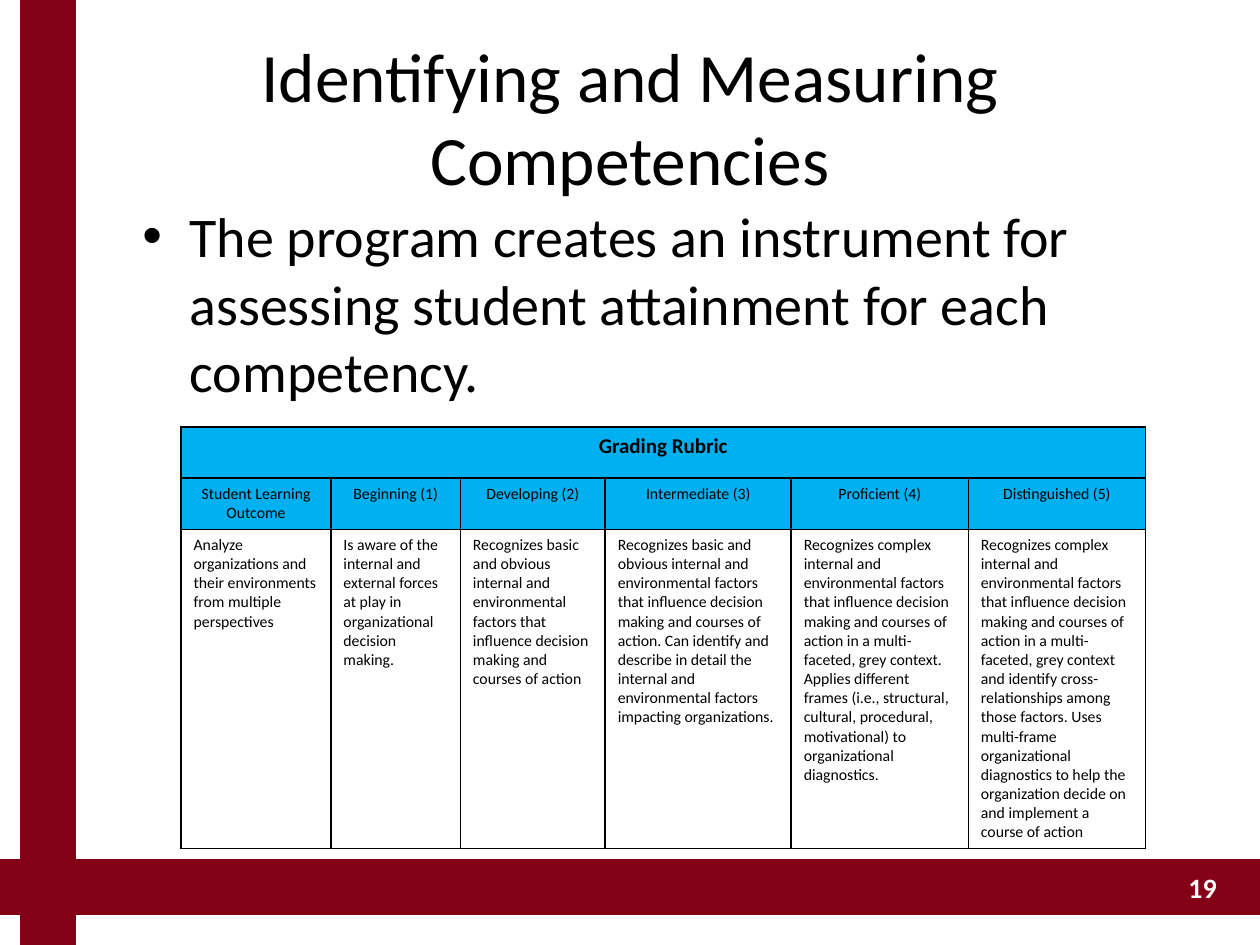
from lxml import etree
from pptx import Presentation
from pptx import util as u
from pptx.dml.color import RGBColor
from pptx.enum import shapes, text
from pptx.oxml.ns import qn

TITLE = "Identifying and Measuring Competencies"
BULLET = "The program creates an instrument for assessing student attainment for each competency."
PAGE_NUMBER = "19"
RUBRIC_TITLE = "Grading Rubric"
RUBRIC = [
    (3.02, "Student Learning Outcome",
     "Analyze organizations and their environments from multiple perspectives"),
    (2.61, "Beginning (1)",
     "Is aware of the internal and external forces at play in organizational decision making."),
    (2.92, "Developing (2)",
     "Recognizes basic and obvious internal and environmental factors that influence "
     "decision making and courses of action"),
    (3.75, "Intermediate (3)",
     "Recognizes basic and obvious internal and environmental factors that influence "
     "decision making and courses of action. Can identify and describe in detail the "
     "internal and environmental factors impacting organizations."),
    (3.57, "Proficient (4)",
     "Recognizes complex internal and environmental factors that influence decision making "
     "and courses of action in a multi-faceted, grey context. Applies different frames (i.e., "
     "structural, cultural, procedural, motivational) to organizational diagnostics."),
    (3.57, "Distinguished (5)",
     "Recognizes complex internal and environmental factors that influence decision making "
     "and courses of action in a multi-faceted, grey context and identify cross-relationships "
     "among those factors. Uses multi-frame organizational diagnostics to help the "
     "organization decide on and implement a course of action"),
]
ROW_HEIGHTS = [1.03, 1.03, 6.35]
BANDS = [(0, 17.35, 25.4, 1.07), (0.43, 0, 1.07, 19.05)]

THEME = {
    "font": "Calibri", "ink": "000000", "paper": "FFFFFF",
    "band": "840017", "header": "00B0F0",
    "title": 39.6, "body": 32, "rubric": 12, "cell": 9, "number": 16,
    "band_line": 2, "border": 1,
}


def color(name):
    return RGBColor.from_string(THEME[name])


def write(frame, words, size, align, ink="ink", bold=False):
    frame.text = words
    para = frame.paragraphs[0]
    para.alignment = align
    para.space_before = u.Pt(0)
    for span in para.runs:
        span.font.name = THEME["font"]
        span.font.size = u.Pt(THEME[size])
        span.font.bold = bold
        span.font.color.rgb = color(ink)
    return para


def place(box, left, top, width, height):
    box.left, box.top, box.width, box.height = map(u.Cm, (left, top, width, height))


def set_frame(frame, anchor, wrap=True):
    frame.auto_size = text.MSO_AUTO_SIZE.NONE
    frame.word_wrap = wrap
    frame.vertical_anchor = anchor
    frame.margin_left = frame.margin_right = u.Cm(0.13)
    frame.margin_top = frame.margin_bottom = u.Cm(0.13)


def add_bullet(para):
    properties = para._p.get_or_add_pPr()
    properties.set("marL", str(u.Cm(0.95)))
    properties.set("indent", str(u.Cm(-0.95)))
    etree.SubElement(properties, qn("a:buFont")).set("typeface", "Arial")
    etree.SubElement(properties, qn("a:buChar")).set("char", "•")


def add_borders(cell):
    properties = cell._tc.get_or_add_tcPr()
    for index, side in enumerate(("lnL", "lnR", "lnT", "lnB")):
        line = etree.Element(qn("a:" + side), w=str(u.Pt(THEME["border"])))
        fill = etree.SubElement(line, qn("a:solidFill"))
        etree.SubElement(fill, qn("a:srgbClr")).set("val", THEME["ink"])
        properties.insert(index, line)


def add_bands(page):
    for index, (left, top, width, height) in enumerate(BANDS):
        band = page.shapes.add_shape(
            shapes.MSO_SHAPE.RECTANGLE, *map(u.Cm, (left, top, width, height)))
        band.shadow.inherit = False
        band.fill.solid()
        band.fill.fore_color.rgb = color("band")
        band.line.color.rgb = color("band")
        band.line.width = u.Pt(THEME["band_line"])
        page.shapes._spTree.insert(2 + index, band._element)


def add_rubric(page):
    widths, headings, levels = zip(*RUBRIC)
    rows = [[RUBRIC_TITLE] + [""] * (len(widths) - 1), headings, levels]
    table = page.shapes.add_table(
        len(rows), len(widths), u.Cm(3.65), u.Cm(8.61),
        u.Cm(sum(widths)), u.Cm(sum(ROW_HEIGHTS))).table
    table.first_row = table.horz_banding = False
    for column, width in zip(table.columns, widths):
        column.width = u.Cm(width)
    for row, height in zip(table.rows, ROW_HEIGHTS):
        row.height = u.Cm(height)
    table.cell(0, 0).merge(table.cell(0, len(widths) - 1))
    for r, row in enumerate(rows):
        for c, words in enumerate(row):
            cell = table.cell(r, c)
            is_level = r == 2
            write(cell.text_frame, words, "rubric" if r == 0 else "cell",
                  text.PP_ALIGN.LEFT if is_level else text.PP_ALIGN.CENTER, bold=r == 0)
            if is_level:
                cell.fill.background()
            else:
                cell.fill.solid()
                cell.fill.fore_color.rgb = color("header")
            add_borders(cell)


def main():
    deck = Presentation()
    deck.slide_width, deck.slide_height = u.Cm(25.4), u.Cm(19.05)
    page = deck.slides.add_slide(deck.slide_layouts[1])
    page.background.fill.solid()
    page.background.fill.fore_color.rgb = color("paper")
    add_bands(page)

    title, body = page.shapes.title, page.placeholders[1]
    place(title, 1.27, 0.76, 22.86, 3.18)
    set_frame(title.text_frame, text.MSO_ANCHOR.MIDDLE)
    write(title.text_frame, TITLE, "title", text.PP_ALIGN.CENTER)

    place(body, 2.74, 3.94, 21.39, 13.08)
    set_frame(body.text_frame, text.MSO_ANCHOR.TOP)
    add_bullet(write(body.text_frame, BULLET, "body", text.PP_ALIGN.LEFT))

    add_rubric(page)

    number = page.shapes.add_textbox(*map(u.Cm, (23.75, 17.42, 0.91, 0.94)))
    set_frame(number.text_frame, text.MSO_ANCHOR.MIDDLE, wrap=False)
    write(number.text_frame, PAGE_NUMBER, "number", text.PP_ALIGN.RIGHT, "paper", True)
    deck.save("out.pptx")


if __name__ == "__main__":
    main()
